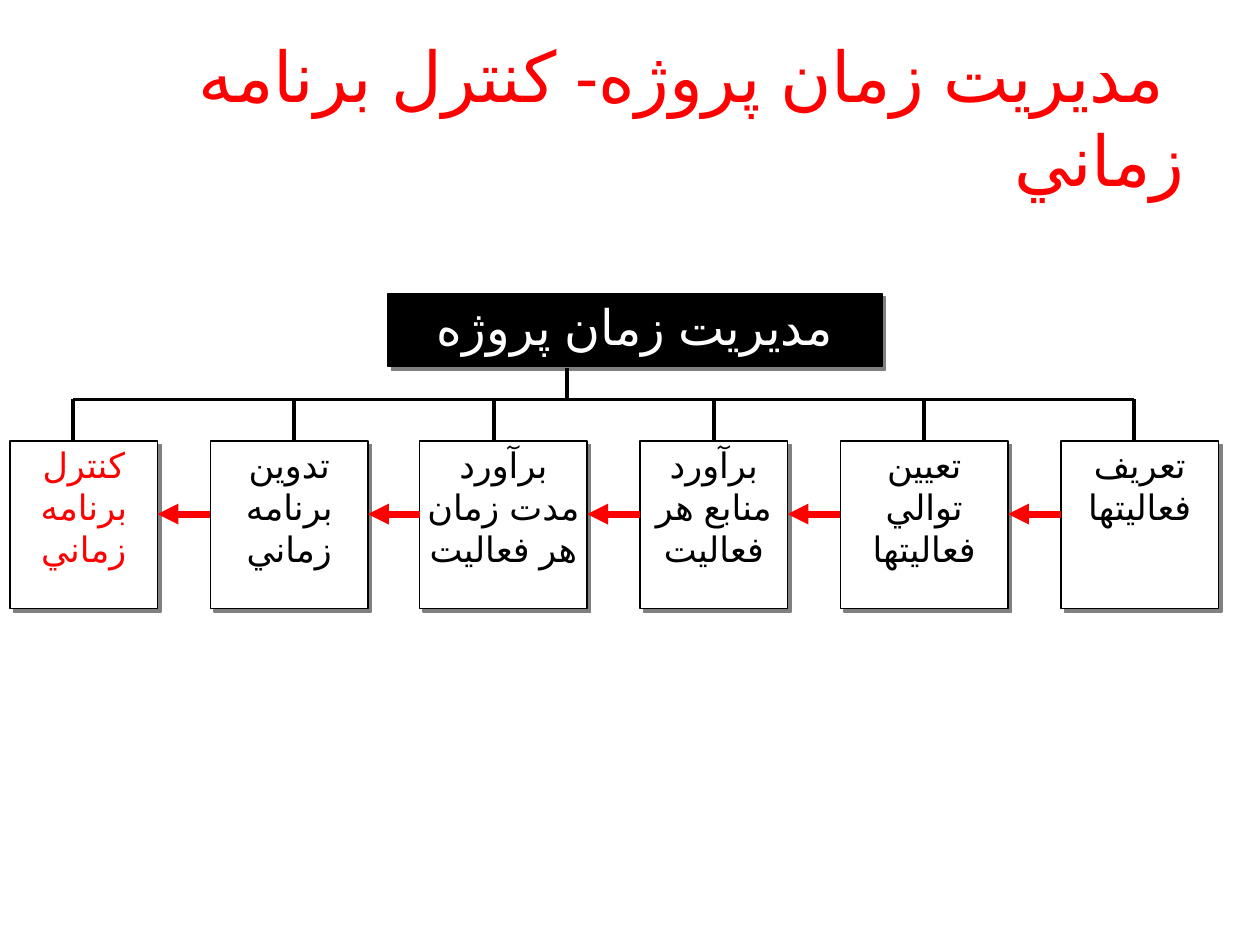
from lxml import etree
from pptx import Presentation
from pptx.dml.color import RGBColor
from pptx.enum.lang import MSO_LANGUAGE_ID
from pptx.enum.shapes import MSO_CONNECTOR, MSO_SHAPE
from pptx.enum.text import MSO_ANCHOR, MSO_AUTO_SIZE, PP_ALIGN
from pptx.oxml import parse_xml
from pptx.oxml.ns import nsdecls, qn
from pptx.util import Inches, Pt

RECT = MSO_SHAPE.RECTANGLE
STRAIGHT = MSO_CONNECTOR.STRAIGHT
TOP, MIDDLE = MSO_ANCHOR.TOP, MSO_ANCHOR.MIDDLE
CENTER, RIGHT = PP_ALIGN.CENTER, PP_ALIGN.RIGHT
NO_FIT = MSO_AUTO_SIZE.NONE
PERSIAN = MSO_LANGUAGE_ID.FARSI
FONT = "Arial"
COLORS = {"red": "FF0000", "black": "000000", "white": "FFFFFF", "shadow": "808080"}
BUS_Y, BOX_Y, BOX_H, ARROW_Y = 3.17, 3.5, 1.33, 4.08
STEPS = [
    (8.42, 1.25, 9, "تعريف فعاليتها", "black"),
    (6.67, 1.33, 7.33, "تعيين توالي فعاليتها", "black"),
    (5.08, 1.17, 5.67, "برآورد منابع هر فعاليت", "black"),
    (3.33, 1.33, 3.92, "برآورد مدت زمان هر فعاليت", "black"),
    (1.67, 1.25, 2.33, "تدوين برنامه زماني", "black"),
    (0.08, 1.17, 0.58, "کنترل برنامه زماني", "red"),
]


def rgb(name):
    return RGBColor.from_string(COLORS[name])


def write(tf, text, size, color, align, rtl=True):
    p = tf.paragraphs[0]
    p.alignment = align
    if rtl:
        p._p.get_or_add_pPr().set("rtl", "1")
    r = p.add_run()
    r.text = text
    r.font.size = Pt(size)
    r.font.name = FONT
    r.font.language_id = PERSIAN
    r.font.color.rgb = rgb(color)
    etree.SubElement(r._r.get_or_add_rPr(), qn("a:cs")).set("typeface", FONT)


def add_title(s, text):
    sp = s.shapes.title
    sp.left, sp.top, sp.width, sp.height = map(Inches, (0.5, 0.3, 9, 1.25))
    tf = sp.text_frame
    tf.word_wrap, tf.auto_size, tf.vertical_anchor = True, NO_FIT, MIDDLE
    write(tf, text, 40, "red", RIGHT)


def add_box(s, x, y, w, h, fill, text, size, color, rtl=True):
    sp = s.shapes.add_shape(RECT, *map(Inches, (x, y, w, h)))
    sp.fill.solid()
    sp.fill.fore_color.rgb = rgb(fill)
    sp.line.color.rgb = rgb("black")
    sp.line.width = Pt(1)
    sp._element.spPr.append(parse_xml(
        f'<a:effectLst {nsdecls("a")}><a:outerShdw dist="{Pt(2.8)}" dir="2700000" '
        f'algn="ctr" rotWithShape="0"><a:srgbClr val="{COLORS["shadow"]}"/>'
        '</a:outerShdw></a:effectLst>'))
    tf = sp.text_frame
    tf.word_wrap, tf.vertical_anchor = True, TOP
    tf.margin_left = tf.margin_right = Inches(0.04)
    tf.margin_top = tf.margin_bottom = Inches(0.02)
    write(tf, text, size, color, CENTER, rtl)
    return sp


def add_line(s, x1, y1, x2, y2, width=2.25, color="black", arrow=False):
    cxn = s.shapes.add_connector(STRAIGHT, *map(Inches, (x1, y1, x2, y2)))
    cxn.line.color.rgb = rgb(color)
    cxn.line.width = Pt(width)
    if arrow:
        etree.SubElement(cxn.line._get_or_add_ln(), qn("a:tailEnd")).set("type", "triangle")
    etree.SubElement(cxn._element.spPr, qn("a:effectLst"))
    return cxn


def add_steps(s):
    """Draw each step with its stem, and an arrow to it from the step before."""
    previous_x = None
    for x, w, stem_x, text, color in STEPS:
        box = add_box(s, x, BOX_Y, w, BOX_H, "white", text, 20, color)
        center = x + w / 2
        if abs(center - stem_x) < 0.01:
            add_line(s, center, BUS_Y, center, BOX_Y).end_connect(box, 0)
        else:
            add_line(s, stem_x, BUS_Y, stem_x, BOX_Y)
        if previous_x is not None:
            add_line(s, previous_x, ARROW_Y, x + w, ARROW_Y, 4, "red", arrow=True)
        previous_x = x


def main():
    prs = Presentation()
    prs.slide_width, prs.slide_height = Inches(10), Inches(7.5)
    s = prs.slides.add_slide(prs.slide_layouts[5])
    add_title(s, " مديريت زمان پروژه- کنترل برنامه زماني")
    add_box(s, 3.08, 2.33, 3.92, 0.58, "black", "مديريت زمان پروژه", 28, "white", rtl=False)
    add_line(s, 4.5, 2.92, 4.5, BUS_Y)
    add_line(s, STEPS[-1][2], BUS_Y, STEPS[0][2], BUS_Y, 2)
    add_steps(s)
    prs.save("out.pptx")


if __name__ == "__main__":
    main()
